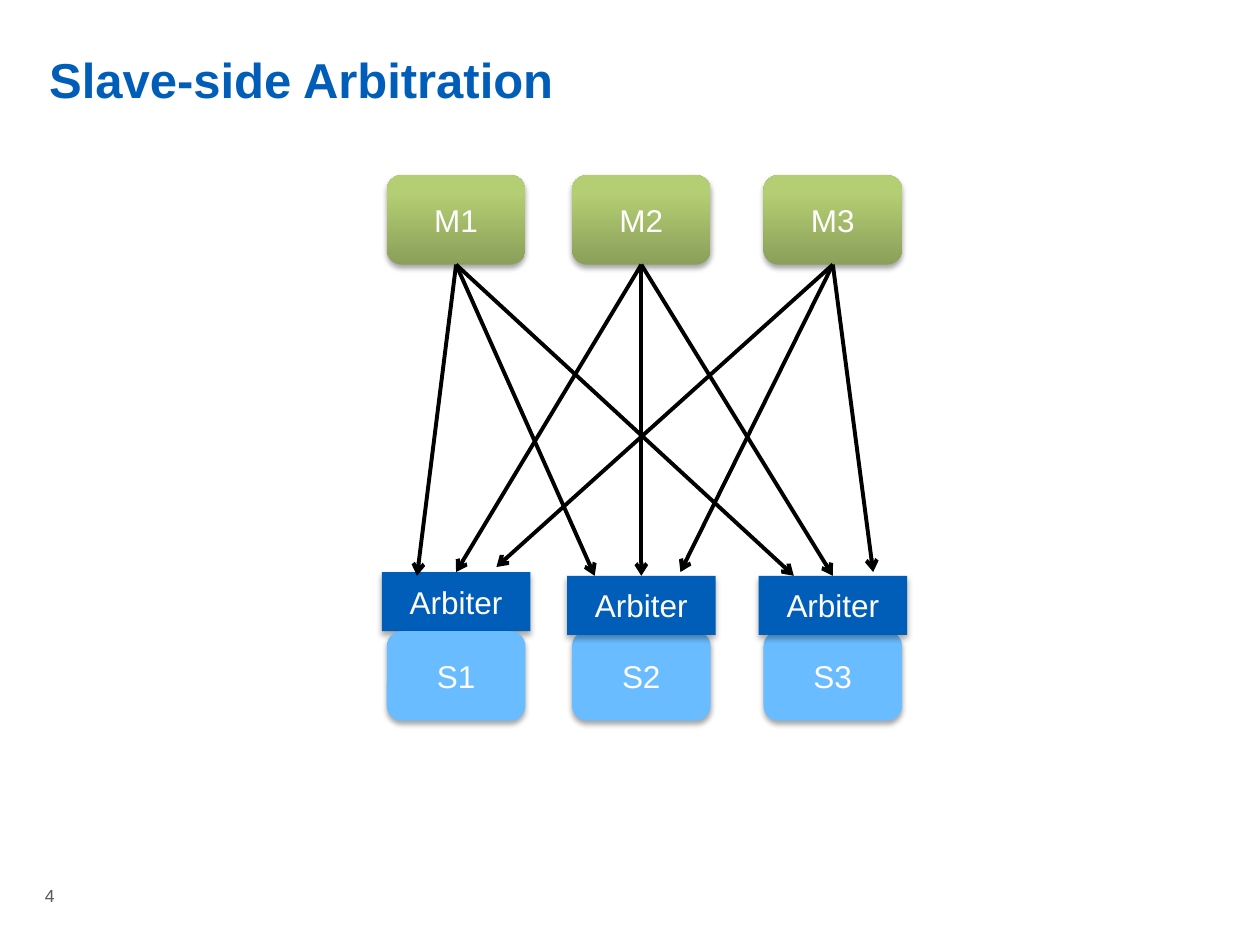
from copy import deepcopy
from pptx import Presentation
from pptx.dml.color import RGBColor as RGB
from pptx.enum.shapes import MSO_CONNECTOR as CONN, MSO_SHAPE as SHAPE
from pptx.enum.text import MSO_ANCHOR as ANCHOR, PP_ALIGN as ALIGN
from pptx.oxml import parse_xml
from pptx.oxml.ns import nsdecls, qn
from pptx.util import Inches, Pt

HUES = {"blue": "005EB8", "sky": "69BCFF", "white": "FFFFFF",
        "black": "000000", "gray": "58585A"}
GREENS = [(0, "8A9F59"), (0.8, "B4CE73"), (1, "B5D172")]

deck = Presentation()
deck.slide_width, deck.slide_height = Inches(10), Inches(7.5)
slide = deck.slides.add_slide(deck.slide_layouts[6])


def write(shape, text, hue, size, align, anchor, bold=False):
    frame = shape.text_frame
    frame.word_wrap = True
    frame.vertical_anchor = anchor
    line = frame.paragraphs[0]
    line.alignment = align
    run = line.add_run()
    run.text = text
    looks = {"name": "Arial", "size": Pt(size), "bold": bold}
    for key, value in looks.items():
        setattr(run.font, key, value)
    run.font.color.rgb = RGB.from_string(HUES[hue])


def block(kind, left, top, wide, high, text, hue, blur, drop, alpha):
    box = slide.shapes.add_shape(kind, Inches(left), Inches(top),
                                 Inches(wide), Inches(high))
    box.line.fill.background()
    if hue == "green":
        box.fill.gradient()
        box.fill.gradient_angle = 90
        last = box._element.spPr.findall(".//" + qn("a:gs"))[-1]
        last.addnext(deepcopy(last))
        for stop, (place, shade) in zip(box.fill.gradient_stops, GREENS):
            stop.position = place
            stop.color.rgb = RGB.from_string(shade)
    else:
        box.fill.solid()
        box.fill.fore_color.rgb = RGB.from_string(HUES[hue])
    # Soft shadow straight below
    box.shadow.inherit = False
    box._element.spPr.find(qn("a:effectLst")).append(parse_xml(
        f'<a:outerShdw {nsdecls("a")} blurRad="{Pt(blur)}" dist="{Pt(drop)}" '
        f'dir="5400000" rotWithShape="0"><a:srgbClr val="{HUES["black"]}">'
        f'<a:alpha val="{alpha * 1000}"/></a:srgbClr></a:outerShdw>'))
    write(box, text, "white", 18, ALIGN.CENTER, ANCHOR.MIDDLE)
    return box


# Title and page number
title = slide.shapes.add_textbox(Inches(0.39), Inches(0.39), Inches(9.21), Inches(0.98))
for side in ("left", "top", "right", "bottom"):
    setattr(title.text_frame, "margin_" + side, 0)
write(title, "Slave-side Arbitration", "blue", 28, ALIGN.LEFT, ANCHOR.TOP, True)
page = slide.shapes.add_textbox(0, Inches(6.71), Inches(0.79), Inches(0.79))
write(page, "4", "gray", 10, ALIGN.CENTER, ANCHOR.MIDDLE)

# Masters, slaves and arbiters; the first arbiter sits higher, behind its slave
mids = [3.62, 5.09, 6.61]
tops = [4.54, 4.57, 4.57]
masters, gates = [], []
for num, (mid, top) in enumerate(zip(mids, tops), 1):
    soft = (3.1, 1.8, 35)
    gate = (SHAPE.RECTANGLE, mid - 0.59, top, 1.18, 0.47, "Arbiter", "blue", 3.5, 2.2, 32)
    slave = (SHAPE.ROUNDED_RECTANGLE, mid - 0.55, 5.01, 1.1, 0.71, f"S{num}", "sky", *soft)
    masters.append(block(SHAPE.ROUNDED_RECTANGLE, mid - 0.55, 1.39, 1.1, 0.71,
                         f"M{num}", "green", *soft))
    if num == 1:
        gates.append(block(*gate))
        block(*slave)
    else:
        block(*slave)
        gates.append(block(*gate))

# Arrows from every master to every arbiter
ends = [[(3.31, 4.57), (4.72, 4.57), (6.3, 4.57)],
        list(zip(mids, tops)),
        [(3.94, 4.5), (5.4, 4.54), (6.93, 4.54)]]
for mid, master, row in zip(mids, masters, ends):
    for (x, y), gate in zip(row, gates):
        wire = slide.shapes.add_connector(CONN.STRAIGHT, Inches(mid), Inches(2.1),
                                          Inches(x), Inches(y))
        wire.begin_connect(master, 2)
        if row is ends[1]:
            wire.end_connect(gate, 0)
        wire.line.width = Pt(2.25)
        wire.line.color.rgb = RGB.from_string(HUES["black"])
        wire.line._get_or_add_ln().append(
            parse_xml(f'<a:tailEnd {nsdecls("a")} type="arrow"/>'))
        wire._element.spPr.append(parse_xml(f'<a:effectLst {nsdecls("a")}/>'))

deck.save("out.pptx")
